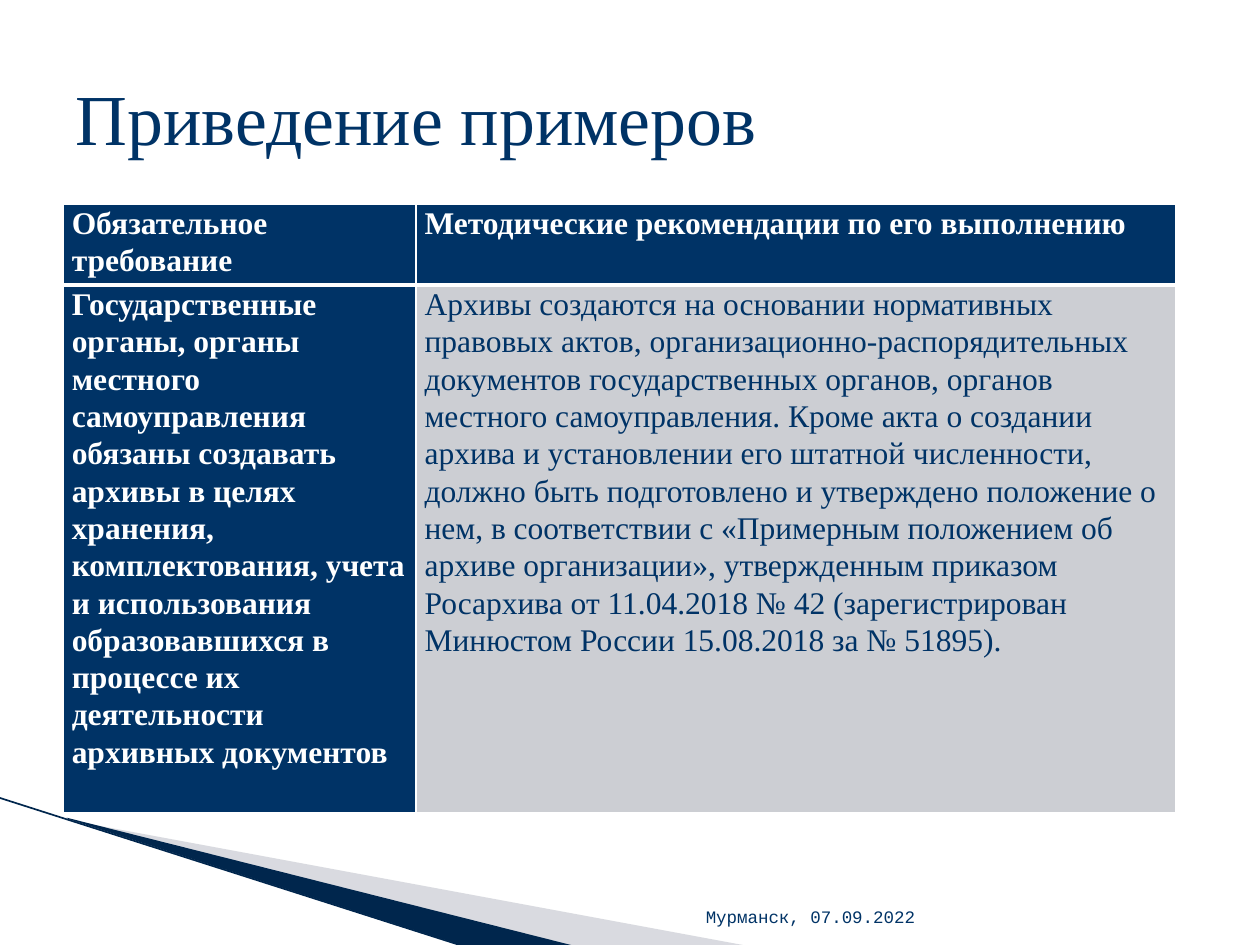
from lxml import etree
from pptx import Presentation, util as u
from pptx.dml.color import RGBColor
from pptx.enum import shapes, text
from pptx.oxml import ns

THEME = {
    "navy": "003366", "deep": "00264D", "white": "FFFFFF",
    "cell": "CCCED3", "mist": "A0A4B2",
    "serif": "Times New Roman", "mono": "Courier New",
    "title": 41, "table": 18, "footer": 10,
}

TITLE = "Приведение примеров"
FOOTER = "Мурманск, 07.09.2022"
ROWS = [
    ("Обязательное требование", "Методические рекомендации по его выполнению"),
    ("Государственные органы, органы местного самоуправления обязаны создавать "
     "архивы в целях хранения, комплектования, учета и использования "
     "образовавшихся в процессе их деятельности архивных документов",
     "Архивы создаются на основании нормативных правовых актов, "
     "организационно-распорядительных документов государственных органов, "
     "органов местного самоуправления. Кроме акта о создании архива и "
     "установлении его штатной численности, должно быть подготовлено и "
     "утверждено положение о нем, в соответствии с «Примерным положением об "
     "архиве организации», утвержденным приказом Росархива от 11.04.2018 № 42 "
     "(зарегистрирован Минюстом России 15.08.2018 за № 51895)."),
]
COLUMN_WIDTHS = [2.8, 6.03]
ROW_HEIGHTS = [0.51, 4.19]
WEDGES = [
    ([(0.55, 6.51), (5.95, 7.51), (4.56, 7.51), (0.55, 6.5)], "mist", 40),
    ([(0.53, 6.49), (4.57, 7.51), (3.72, 7.52), (0.54, 6.5)], "deep", 100),
]
EDGE = [(-0.01, 6.33), (3.71, 7.52)]


def color(name):
    return RGBColor.from_string(THEME[name])


def write(frame, content, size="table", font="serif", ink="navy", bold=False,
          align=text.PP_ALIGN.LEFT, spacing=None):
    frame.word_wrap = True
    paragraph = frame.paragraphs[0]
    paragraph.alignment = align
    paragraph.line_spacing = spacing
    run = paragraph.add_run()
    run.text = content
    run.font.name = THEME[font]
    run.font.size = u.Pt(THEME[size])
    run.font.bold = bold
    run.font.color.rgb = color(ink)


def add_wedge(slide, points, fill, opacity):
    corners = [(u.Inches(x), u.Inches(y)) for x, y in points]
    builder = slide.shapes.build_freeform(*corners[0])
    builder.add_line_segments(corners[1:], close=True)
    shape = builder.convert_to_shape()
    shape.shadow.inherit = False
    shape.fill.solid()
    shape.fill.fore_color.rgb = color(fill)
    shape.line.fill.background()
    if opacity < 100:
        tint = shape.fill._xPr.find(".//" + ns.qn("a:srgbClr"))
        etree.SubElement(tint, ns.qn("a:alpha"), val=str(opacity * 1000))


def add_edge(slide):
    ends = [u.Inches(value) for point in EDGE for value in point]
    line = slide.shapes.add_connector(shapes.MSO_CONNECTOR.STRAIGHT, *ends)
    line.line.color.rgb = color("deep")
    line.line.width = u.Pt(0.95)
    etree.SubElement(line._element.spPr, ns.qn("a:effectLst"))


def set_borders(cell, bottom):
    properties = cell._tc.get_or_add_tcPr()
    widths = {"lnL": 1, "lnR": 1, "lnT": 1, "lnB": bottom}
    for index, (side, width) in enumerate(widths.items()):
        border = etree.Element(ns.qn("a:" + side), w=str(u.Pt(width)))
        fill = etree.SubElement(border, ns.qn("a:solidFill"))
        etree.SubElement(fill, ns.qn("a:srgbClr"), val=THEME["white"])
        properties.insert(index, border)


def add_requirements(slide):
    table = slide.shapes.add_table(
        len(ROWS), len(COLUMN_WIDTHS), u.Inches(0.5), u.Inches(1.62),
        u.Inches(sum(COLUMN_WIDTHS)), u.Inches(sum(ROW_HEIGHTS))).table
    for column, width in zip(table.columns, COLUMN_WIDTHS):
        column.width = u.Inches(width)
    for row, height in zip(table.rows, ROW_HEIGHTS):
        row.height = u.Inches(height)
    for i, entries in enumerate(ROWS):
        for j, content in enumerate(entries):
            cell = table.cell(i, j)
            heading = i == 0 or j == 0
            cell.margin_left = cell.margin_right = u.Inches(0.07)
            cell.margin_top = cell.margin_bottom = 0
            cell.fill.solid()
            cell.fill.fore_color.rgb = color("navy" if heading else "cell")
            set_borders(cell, bottom=3 if i == 0 else 1)
            write(cell.text_frame, content, bold=heading, spacing=1.07,
                  ink="white" if heading else "navy")


def main():
    presentation = Presentation()
    presentation.slide_width = u.Inches(10)
    presentation.slide_height = u.Inches(7.5)
    slide = presentation.slides.add_slide(presentation.slide_layouts[5])

    for points, fill, opacity in WEDGES:
        add_wedge(slide, points, fill, opacity)
    add_edge(slide)

    footer = slide.shapes.add_textbox(
        u.Inches(4.79), u.Inches(7.01), u.Inches(2.57), u.Inches(0.4))
    footer.text_frame.vertical_anchor = text.MSO_ANCHOR.BOTTOM
    write(footer.text_frame, FOOTER, size="footer", font="mono",
          align=text.PP_ALIGN.RIGHT)

    title = slide.shapes.title
    title.left, title.top = u.Inches(0.5), u.Inches(0.3)
    title.width, title.height = u.Inches(9), u.Inches(1.25)
    title.text_frame.vertical_anchor = text.MSO_ANCHOR.MIDDLE
    write(title.text_frame, TITLE, size="title")

    add_requirements(slide)
    presentation.save("out.pptx")


if __name__ == "__main__":
    main()
